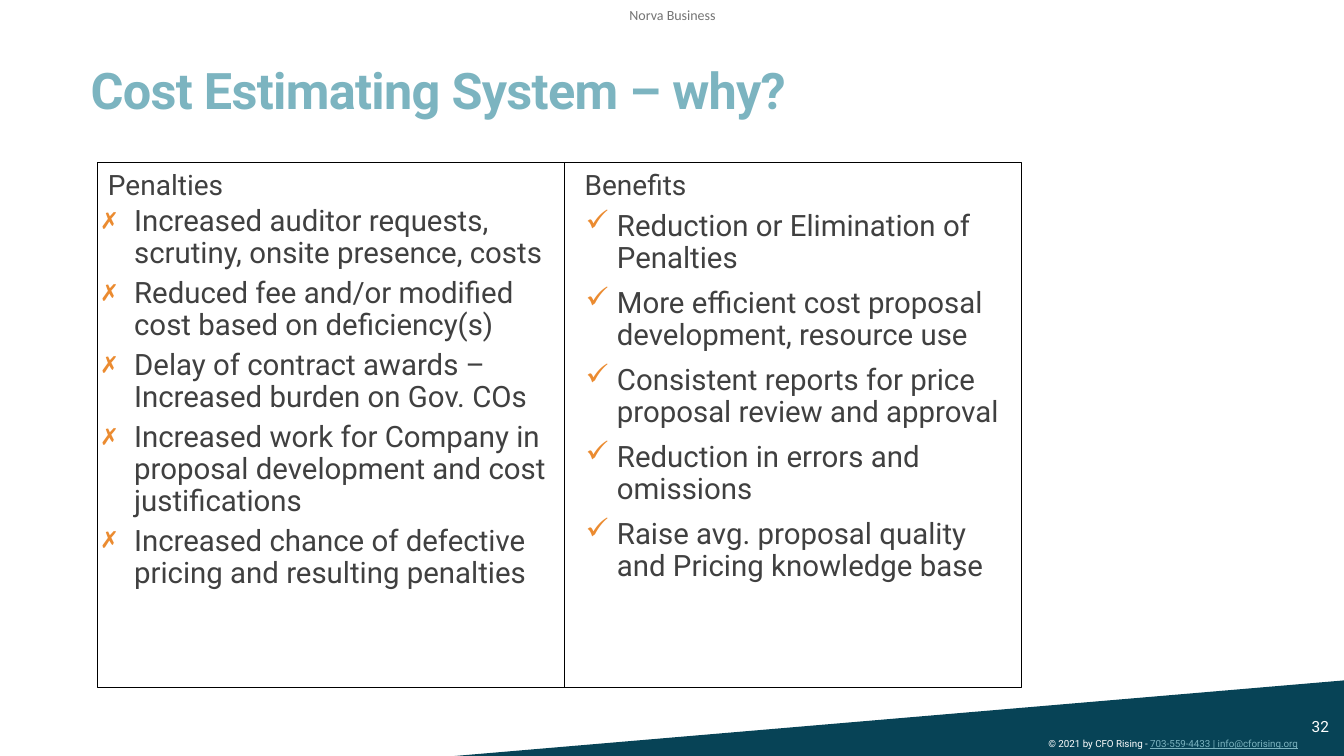
from pptx import Presentation
from pptx.dml.color import RGBColor
from pptx.enum.shapes import MSO_SHAPE as Preset
from pptx.enum.text import MSO_ANCHOR as Anchor, PP_ALIGN as Align
from pptx.oxml.ns import qn
from pptx.util import Inches, Pt
from lxml.etree import SubElement

COLORS = {
    "teal": "7CB4C0",
    "navy": "074356",
    "white": "FFFFFF",
    "gray": "737373",
    "text": "404040",
    "line": "000000",
    "bullet": "EB8B30",
}

presentation = Presentation()
presentation.slide_width = Inches(13.33)
presentation.slide_height = Inches(7.5)
slide = presentation.slides.add_slide(presentation.slide_layouts[6])
column = presentation.slide_width / 100
row = presentation.slide_height / 100


def place(left, top, width, height):
    return int(left * column), int(top * row), int(width * column), int(height * row)


def style(font, size, color, name="Roboto"):
    font.name = name
    font.size = Pt(size)
    font.color.rgb = RGBColor.from_string(COLORS[color])


triangle = slide.shapes.add_shape(Preset.RIGHT_TRIANGLE, *place(33.83, 90, 66.17, 10))
triangle.shadow.inherit = False
triangle.fill.solid()
triangle.fill.fore_color.rgb = RGBColor.from_string(COLORS["navy"])
triangle.line.fill.background()
triangle._element.spPr.find(qn("a:xfrm")).set("flipH", "1")

labels = [
    ("Norva Business", (45.76, 0, 8.55, 3.87), 10, "gray", "Calibri", Anchor.MIDDLE),
    ("© 2021\u00a0by CFO Rising - ", (77.27, 96.93, 22.7, 3.07), 7, "white", "Roboto", Anchor.TOP),
    ("Cost Estimating System – why?", (6, 4.4, 83.65, 12.13), 36, "teal", "Roboto", Anchor.BOTTOM),
    ("32", (96.85, 93.47, 3.15, 5.33), 11, "white", "Roboto", Anchor.MIDDLE),
]
boxes = []
for text, area, size, color, name, anchor in labels:
    box = slide.shapes.add_textbox(*place(*area))
    box.text_frame.word_wrap = False
    box.text_frame.vertical_anchor = anchor
    box.text_frame.text = text
    style(box.text_frame.paragraphs[0].runs[0].font, size, color, name)
    boxes.append(box)
header, footer, title, number = boxes

header.text_frame.margin_left = header.text_frame.margin_right = 0
header.text_frame.margin_top = header.text_frame.margin_bottom = 0
header.text_frame.paragraphs[0].alignment = Align.CENTER

contact = footer.text_frame.paragraphs[0].add_run()
contact.text = "703-559-4433 |\u00a0info@cforising.org"
style(contact.font, 7, "teal")
contact.font.underline = True

title.text_frame.word_wrap = True
title_paragraph = title.text_frame.paragraphs[0]
title_paragraph.line_spacing = 0.85
title_paragraph.runs[0].font.bold = True
title_paragraph.runs[0].font._element.set("spc", "-50")

panels = [
    ("Penalties", 7.28, 34.73, 0, "✗", 0.36, 2, [
        "Increased auditor requests, scrutiny, onsite presence, costs",
        "Reduced fee and/or modified cost based on deficiency(s)",
        "Delay of contract awards – Increased burden on Gov. COs",
        "Increased work for Company in proposal development and cost justifications",
        "Increased chance of defective pricing and resulting penalties",
    ]),
    ("Benefits", 42.01, 33.98, 0.1, "✓", 0.42, 5.6, [
        "Reduction or Elimination of Penalties",
        "More efficient cost proposal development, resource use",
        "Consistent reports for price proposal review and approval",
        "Reduction in errors and omissions",
        "Raise avg. proposal quality and Pricing knowledge base",
    ]),
]
for heading, left, width, inset, mark, indent, space_before, points in panels:
    panel = slide.shapes.add_shape(Preset.RECTANGLE, *place(left, 21.47, width, 69.47))
    panel.shadow.inherit = False
    panel.fill.background()
    panel.line.color.rgb = RGBColor.from_string(COLORS["line"])
    panel.line.width = Pt(0.75)
    frame = panel.text_frame
    frame.word_wrap = True
    frame.vertical_anchor = Anchor.TOP
    frame.margin_left = frame.margin_right = Inches(inset)

    frame.text = heading
    paragraph = frame.paragraphs[0]
    paragraph.alignment = Align.LEFT
    paragraph.space_after = Pt(2)
    paragraph._p.get_or_add_pPr().set("marL", str(Inches(0.1)))
    style(paragraph.runs[0].font, 20, "text")

    for point in points:
        paragraph = frame.add_paragraph()
        paragraph.text = point
        paragraph.level = 1
        paragraph.alignment = Align.LEFT
        paragraph.line_spacing = 0.9
        paragraph.space_before = Pt(space_before)
        paragraph.space_after = Pt(4)
        properties = paragraph._p.get_or_add_pPr()
        properties.set("marL", str(Inches(indent)))
        properties.set("indent", str(Inches(-0.31)))
        bullet_color = SubElement(properties, qn("a:buClr"))
        SubElement(bullet_color, qn("a:srgbClr")).set("val", COLORS["bullet"])
        SubElement(properties, qn("a:buChar")).set("char", mark)
        style(paragraph.runs[0].font, 21, "text")

presentation.save("out.pptx")
